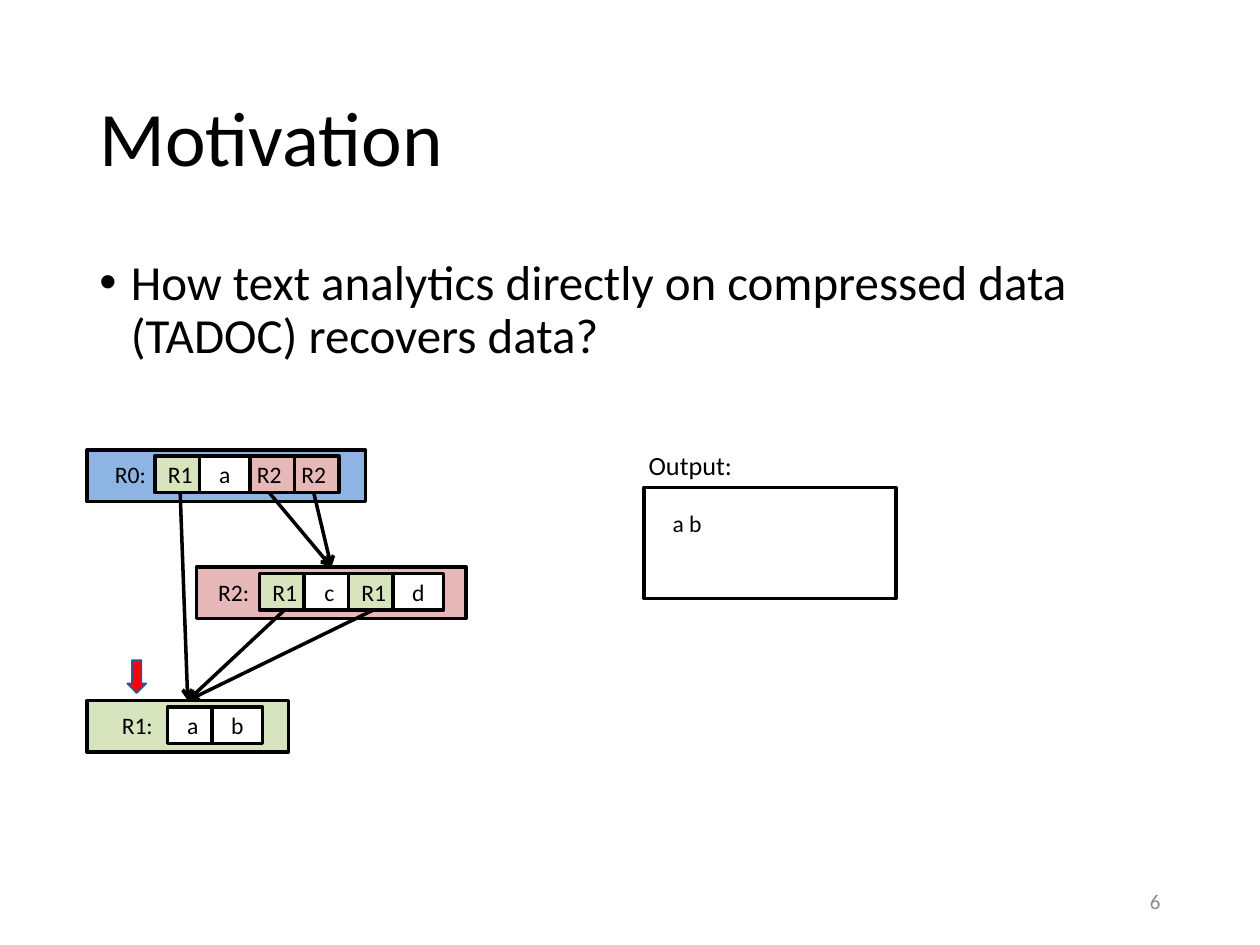
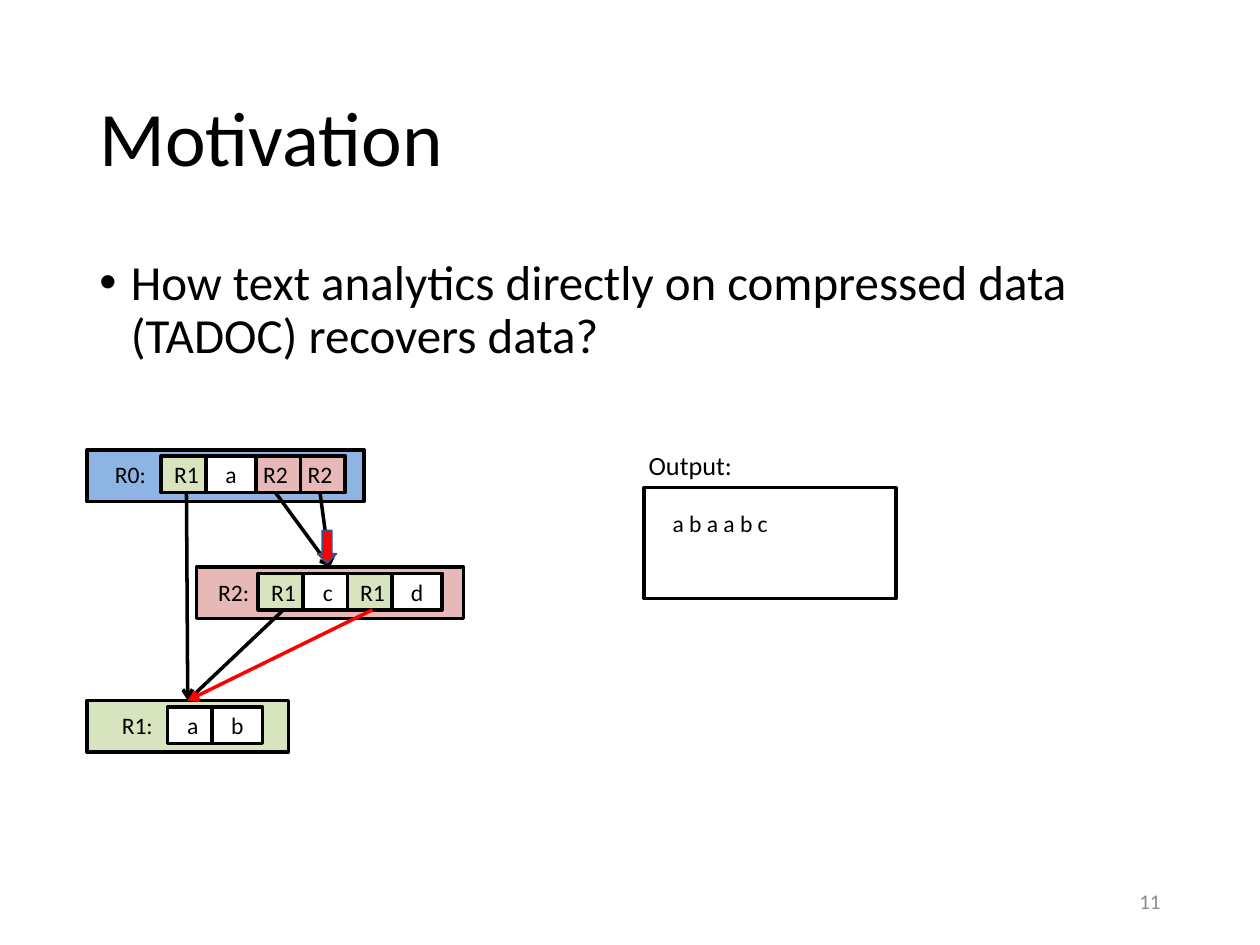
from dataclasses import dataclass

from lxml.etree import SubElement
from pptx import Presentation
from pptx.dml.color import RGBColor
from pptx.enum.shapes import MSO_CONNECTOR, MSO_SHAPE
from pptx.enum.text import MSO_ANCHOR, MSO_AUTO_SIZE, PP_ALIGN
from pptx.oxml.ns import qn
from pptx.util import Inches, Pt

SLIDE_WIDTH, SLIDE_HEIGHT = Inches(10), Inches(7.5)
COLUMN, ROW = SLIDE_WIDTH / 10, SLIDE_HEIGHT / 7.5
BLACK = RGBColor(0x00, 0x00, 0x00)
WHITE = RGBColor(0xFF, 0xFF, 0xFF)
GREY = RGBColor(0x8C, 0x8C, 0x8C)
RED = RGBColor(0xFF, 0x00, 0x00)
NAVY = RGBColor(0x32, 0x54, 0x91)
RULE_COLOURS = {
    "R0": RGBColor(0x8E, 0xB4, 0xE3),
    "R1": RGBColor(0xD7, 0xE4, 0xBD),
    "R2": RGBColor(0xE6, 0xB9, 0xB8),
}

FRAME = {"word_wrap": True, "auto_size": MSO_AUTO_SIZE.NONE}
MIDDLE = {**FRAME, "vertical_anchor": MSO_ANCHOR.MIDDLE}
TIGHT = {**MIDDLE, "margin_left": 0, "margin_right": 0,
         "margin_top": 0, "margin_bottom": 0}
LEFT = {"alignment": PP_ALIGN.LEFT}
CENTRED = {"alignment": PP_ALIGN.CENTER}
RIGHT = {"alignment": PP_ALIGN.RIGHT}
HEADING = {**LEFT, "line_spacing": 0.9}
BULLET = {**HEADING, "space_before": Pt(10)}

CELL_WIDTH, CELL_HEIGHT, CELL_PITCH = 0.4, 0.29, 1.06 / 3
CELL_TOP, RULE_HEIGHT = 0.05, 0.41
CALL_LINKS = (("R0", 2, "R2"), ("R0", 3, "R2"), ("R0", 0, "R1"),
              ("R2", 0, "R1"), ("R2", 2, "R1"))


@dataclass(frozen=True)
class Box:
    """An area measured in columns and rows of the slide grid."""
    left: float
    top: float
    width: float
    height: float

    def inside(self, left, top, width, height):
        """Return an area offset from this one."""
        return Box(self.left + left, self.top + top, width, height)

    def emu(self):
        """Return left, top, width and height in slide units."""
        return (round(self.left * COLUMN), round(self.top * ROW),
                round(self.width * COLUMN), round(self.height * ROW))


@dataclass(frozen=True)
class Rule:
    """A grammar rule: its place, label and symbols."""
    name: str
    box: Box
    label_left: float
    label_width: float
    cells_left: float
    symbols: tuple
    stacking: tuple


@dataclass(frozen=True)
class Step:
    """One moment of the decompression."""
    number: str
    output: str
    rule_widths: dict
    cells_left: dict
    marked_rule: str
    marker_offset: tuple
    active_link: tuple = ()


STEPS = (
    Step("6", "a b", {"R0": 2.21, "R1": 1.6, "R2": 2.14},
         {"R0": 0.54, "R1": 0.64, "R2": 0.5}, "R1", (0.32, -0.32)),
    Step("11", "a b a a b c", {"R0": 2.2, "R1": 1.6, "R2": 2.12},
         {"R0": 0.59, "R1": 0.64, "R2": 0.49}, "R2", (0.96, -0.29),
         ("R2", 2, "R1")),
)


def apply(target, values):
    """Set each named attribute of the target."""
    for name, value in values.items():
        setattr(target, name, value)


def write(holder, text, size, frame=FRAME, paragraph=LEFT, colour=BLACK):
    """Write one formatted paragraph and return it."""
    apply(holder.text_frame, frame)
    line = holder.text_frame.paragraphs[0]
    apply(line, paragraph)
    run = line.add_run()
    run.text = text
    apply(run.font, {"name": "Calibri", "size": Pt(size), "bold": False})
    run.font.color.rgb = colour
    return line


def add_text(slide, box, text, size, **style):
    """Add a text box and return its paragraph."""
    return write(slide.shapes.add_textbox(*box.emu()), text, size, **style)


def add_block(slide, box, fill=None, line=BLACK, width=2,
              kind=MSO_SHAPE.RECTANGLE):
    """Add a flat shape with optional fill and outline."""
    block = slide.shapes.add_shape(kind, *box.emu())
    block.shadow.inherit = False
    if fill is None:
        block.fill.background()
    else:
        block.fill.solid()
        block.fill.fore_color.rgb = fill
    if line is None:
        block.line.fill.background()
    else:
        block.line.color.rgb = line
        block.line.width = Pt(width)
    return block


def add_link(slide, symbol, target, colour):
    """Join the foot of a symbol to the top of a rule."""
    link = slide.shapes.add_connector(MSO_CONNECTOR.STRAIGHT, 0, 0, 0, 0)
    link.begin_connect(symbol, 2)
    link.end_connect(target, 0)
    link.line.color.rgb = colour
    link.line.width = Pt(2)
    SubElement(link.line._get_or_add_ln(), qn("a:tailEnd"), type="arrow")
    SubElement(link._element.spPr, qn("a:effectLst"))


def draw_heading(slide, box):
    """Place the title and the question below it."""
    title = slide.shapes.title
    place = box.inside(0, 0, box.width, 1.45).emu()
    apply(title, dict(zip(("left", "top", "width", "height"), place)))
    write(title, "Motivation", 44, MIDDLE, HEADING)
    question = add_text(
        slide, box.inside(0, 1.6, box.width, 4.76),
        "How text analytics directly on compressed data (TADOC) recovers data?",
        28, paragraph=BULLET)
    properties = question._p.get_or_add_pPr()
    properties.set("marL", str(Inches(0.25)))
    properties.set("indent", str(-Inches(0.25)))
    SubElement(properties, qn("a:buFont"), typeface="Arial")
    SubElement(properties, qn("a:buChar"), char="•")


def draw_output(slide, box, output):
    """Show the text recovered so far."""
    add_block(slide, box.inside(0.06, 0.35, 2, 0.88))
    add_text(slide, box.inside(0, 0, 0.94, 0.35), "Output:", 15)
    add_text(slide, box.inside(0.19, 0.47, 1.83, 0.33), output, 13.5)


def draw_rule(slide, rule):
    """Draw a rule and return its bar and symbols by position."""
    colour = RULE_COLOURS[rule.name]
    bar = add_block(slide, rule.box, colour)
    label = add_block(slide, rule.box.inside(
        rule.label_left, CELL_TOP, rule.label_width, CELL_HEIGHT), colour, None)
    write(label, f"{rule.name}:", 13.5, TIGHT, CENTRED)
    cells = {}
    for position in rule.stacking:
        symbol = rule.symbols[position]
        cells[position] = add_block(slide, rule.box.inside(
            rule.cells_left + position * CELL_PITCH, CELL_TOP,
            CELL_WIDTH, CELL_HEIGHT), RULE_COLOURS.get(symbol, WHITE))
        write(cells[position], symbol, 13.5, TIGHT, CENTRED)
    return bar, cells


def draw_grammar(slide, box, step):
    """Draw the rules, their references and the current marker."""
    layout = (
        ("R1", 0, 1.99, 0.07, 0.66, ("a", "b"), (0, 1)),
        ("R2", 0.87, 0.93, 0.03, 0.53, ("R1", "c", "R1", "d"), (0, 1, 2, 3)),
        ("R0", 0, 0, 0.04, 0.61, ("R1", "a", "R2", "R2"), (3, 0, 2, 1)),
    )
    rules = {
        name: Rule(name, box.inside(left, top, step.rule_widths[name], RULE_HEIGHT),
                   label_left, label_width, step.cells_left[name], symbols, stacking)
        for name, left, top, label_left, label_width, symbols, stacking in layout
    }
    drawn = {name: draw_rule(slide, rule) for name, rule in rules.items()}
    for link in CALL_LINKS:
        source, position, target = link
        add_link(slide, drawn[source][1][position], drawn[target][0],
                 RED if link == step.active_link else BLACK)
    marker = rules[step.marked_rule].box.inside(*step.marker_offset, 0.15, 0.26)
    add_block(slide, marker, RED, NAVY, 1, MSO_SHAPE.DOWN_ARROW)


def draw_step(deck, step):
    """Add one slide for a decompression step."""
    slide = deck.slides.add_slide(deck.slide_layouts[5])
    draw_heading(slide, Box(0.69, 0.4, 8.62, 6.36))
    add_text(slide, Box(7.06, 6.95, 2.25, 0.4), step.number, 12,
             frame=MIDDLE, paragraph=RIGHT, colour=GREY)
    draw_output(slide, Box(5.05, 3.52, 2.06, 1.23), step.output)
    draw_grammar(slide, Box(0.69, 3.57, 3.01, 2.4), step)


def main():
    """Build and save the deck."""
    deck = Presentation()
    apply(deck, {"slide_width": SLIDE_WIDTH, "slide_height": SLIDE_HEIGHT})
    for step in STEPS:
        draw_step(deck, step)
    deck.save("out.pptx")


if __name__ == "__main__":
    main()
